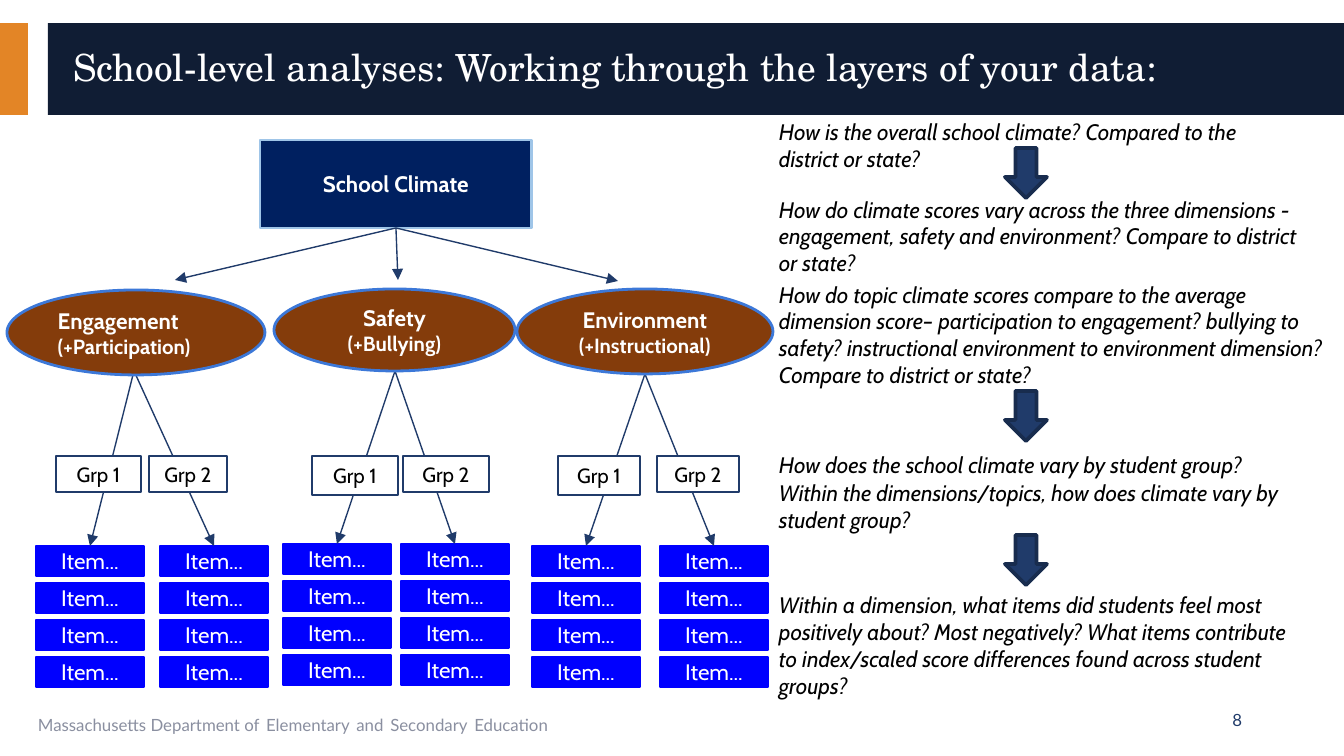
from pptx import Presentation
from pptx.dml.color import RGBColor as RGB
from pptx.enum.shapes import MSO_CONNECTOR as Link, MSO_SHAPE as Form
from pptx.enum.text import MSO_ANCHOR as Anchor, PP_ALIGN as Align
from pptx.oxml.ns import qn
from pptx.util import Pt
from lxml.etree import SubElement

SCALE = 914400 / 134.4

NAVY = RGB(0x10, 0x1D, 0x34)
ORANGE = RGB(0xE3, 0x85, 0x26)
INK = RGB(0x20, 0x3B, 0x6A)
EDGE = RGB(0x18, 0x2C, 0x4E)
GREY = RGB(0x8A, 0x8F, 0xA0)
DEEP = RGB(0x00, 0x20, 0x60)
PALE = RGB(0x9F, 0xC5, 0xE8)
BROWN = RGB(0x84, 0x3C, 0x0B)
SKY = RGB(0x3C, 0x78, 0xD8)
BLUE = RGB(0x00, 0x00, 0xFF)
WHITE = RGB(0xFF, 0xFF, 0xFF)
BLACK = RGB(0x00, 0x00, 0x00)

# Dimension: label, alignment, ellipse box, arrow tip, stem start, top of items,
# then for each group: left, width, height, left of its items
BRANCHES = [
    ("Engagement\n(+Participation)", Align.LEFT, (7, 290, 258, 85), (175, 280),
     (134, 371), 546, [(56, 85, 36, 36), (149, 78, 36, 160)]),
    ("Safety\n(+Bullying)", Align.CENTER, (274, 289, 241, 82), (398, 280),
     (395, 371), 544, [(312, 86, 39, 283), (403, 86, 36, 401)]),
    ("Environment\n(+Instructional)", Align.CENTER, (517, 289, 256, 85), (618, 281),
     (645, 374), 546, [(558, 82, 39, 532), (657, 82, 36, 660)]),
]

# Top, width, height, wording
QUESTIONS = [
    (113, 526, 65, "How is the overall school climate? Compared to the district or state?"),
    (199, 551, 74, "How do climate scores vary across the three dimensions - engagement, "
     "safety and environment? Compare to district or state?"),
    (301, 571, 67, "How do topic climate scores compare to the average dimension score– "
     "participation to engagement? bullying to safety? instructional environment "
     "to environment dimension? Compare to district or state?"),
    (437, 603, 55, "How does the school climate vary by student group?"),
    (473, 571, 67, "Within the dimensions/topics, how does climate vary by student group?"),
    (590, 538, 110, "Within a dimension, what items did students feel most positively "
     "about? Most negatively? What items contribute to index/scaled score "
     "differences found across student groups?"),
]


def px(*nums):
    return [round(n * SCALE) for n in nums]


def style(run, size, color, face="Cabin", bold=False, italic=False):
    font = run.font
    font.name, font.size, font.bold, font.italic = face, Pt(size), bold, italic
    font.color.rgb = color


def write(shape, text, size, color, align=Align.LEFT, pad=(13, 13), anchor=Anchor.MIDDLE, **look):
    frame = shape.text_frame
    frame.word_wrap = True
    frame.vertical_anchor = anchor
    frame.margin_left = frame.margin_right = px(pad[0])[0]
    frame.margin_top = frame.margin_bottom = px(pad[1])[0]
    frame.text = text
    for para in frame.paragraphs:
        para.alignment = align
        for run in para.runs:
            style(run, size, color, **look)
    return frame


def add_label(slide, box, text, size, color, **look):
    return write(slide.shapes.add_textbox(*px(*box)), text, size, color, **look)


def add_form(slide, form, box, fill, edge=None, width=1.5):
    shape = slide.shapes.add_shape(form, *px(*box))
    shape.shadow.inherit = False
    shape.fill.solid()
    shape.fill.fore_color.rgb = fill
    if edge is None:
        shape.line.fill.background()
    else:
        shape.line.color.rgb = edge
        shape.line.width = Pt(width)
    return shape


def add_arrow(slide, start, end):
    arrow = slide.shapes.add_connector(Link.STRAIGHT, *px(*start, *end))
    arrow.line.color.rgb = INK
    arrow.line.width = Pt(0.75)
    SubElement(arrow.line._get_or_add_ln(), qn("a:tailEnd"), type="triangle")
    SubElement(arrow._element.spPr, qn("a:effectLst"))
    return arrow


def add_items(slide, left, top):
    stack = []
    for row in range(4):
        item = add_form(slide, Form.RECTANGLE, (left, top + 37 * row, 108, 30), BLUE, BLUE)
        write(item, "Item...", 12, WHITE, Align.CENTER)
        stack.append(item)
    return stack[0]


def add_branch(slide, root, branch):
    label, align, oval, tip, stem, top, groups = branch
    add_arrow(slide, (396, 228), tip).begin_connect(root, 2)
    # Items and the arrows that run behind the group boxes
    for left, wide, high, column in groups:
        first = add_items(slide, column, top)
        add_arrow(slide, stem, (column + 54, top)).end_connect(first, 0)
    for num, (left, wide, high, column) in enumerate(groups, 1):
        group = add_form(slide, Form.RECTANGLE, (left, 456, wide, high), WHITE, INK, 1)
        write(group, f"Grp {num}", 11, BLACK, Align.CENTER)
    # Dimension
    shape = add_form(slide, Form.OVAL, oval, BROWN, SKY)
    frame = write(shape, label, 12, WHITE, align, bold=True)
    frame.paragraphs[1].runs[0].font.size = Pt(11)


def add_footer(slide):
    frame = add_label(slide, (28, 700, 851, 40), "Massachusetts Department of", 9, GREY,
                      face="Lato", pad=(10, 5), anchor=Anchor.TOP)
    for word in ("Elementary", "and", "Secondary", "Education"):
        for text, size, color in ((" ", 14, INK), (word, 9, GREY)):
            run = frame.paragraphs[0].add_run()
            run.text = text
            style(run, size, color, "Lato")
    add_label(slide, (1210, 700, 42, 40), "8", 9, INK, face="Lato",
              align=Align.RIGHT, pad=(10, 5))


def main():
    deck = Presentation()
    deck.slide_width, deck.slide_height = px(1344, 756)
    slide = deck.slides.add_slide(deck.slide_layouts[6])

    # Title band and footer
    add_form(slide, Form.RECTANGLE, (0, 23, 28, 92), ORANGE)
    add_form(slide, Form.RECTANGLE, (48, 23, 1296, 92), NAVY)
    add_footer(slide)
    title = add_label(slide, (63, 32, 1254, 75),
                      "School-level analyses: Working through the layers of your data:",
                      20, WHITE, face="TeX Gyre Schola", pad=(10, 5))
    title.paragraphs[0].line_spacing = 0.9

    # Questions and the block arrows between them
    for top, wide, high, text in QUESTIONS:
        add_label(slide, (766, top, wide, high), text, 12, BLACK, italic=True)
    for top in (148, 391, 535):
        add_form(slide, Form.DOWN_ARROW, (1005, top, 42, 50), INK, EDGE, 2)

    # Tree
    root = add_form(slide, Form.RECTANGLE, (260, 140, 272, 88), DEEP, PALE)
    write(root, "School Climate", 12, WHITE, Align.CENTER, bold=True)
    for branch in BRANCHES:
        add_branch(slide, root, branch)

    deck.save("out.pptx")


if __name__ == "__main__":
    main()
